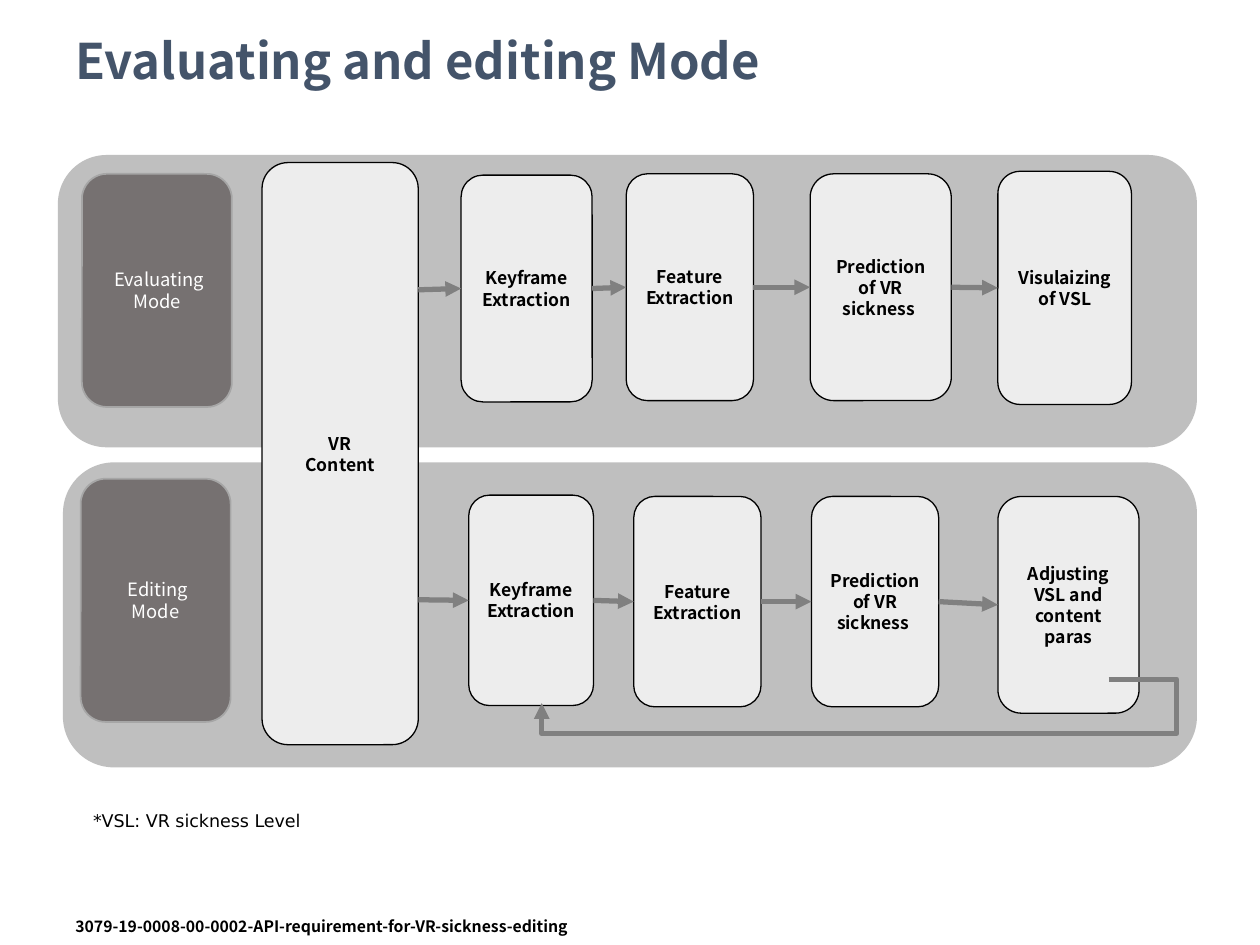
from dataclasses import dataclass

from lxml import etree
from pptx import Presentation
from pptx.dml.color import RGBColor
from pptx.enum.shapes import MSO_CONNECTOR, MSO_SHAPE
from pptx.enum.text import MSO_ANCHOR, PP_ALIGN
from pptx.oxml.ns import qn
from pptx.util import Inches, Pt

ROUNDED = MSO_SHAPE.ROUNDED_RECTANGLE
STRAIGHT = MSO_CONNECTOR.STRAIGHT
ELBOW = MSO_CONNECTOR.ELBOW
MIDDLE = MSO_ANCHOR.MIDDLE
TOP = MSO_ANCHOR.TOP
CENTER = PP_ALIGN.CENTER
LEFT_SIDE, RIGHT_SIDE = 1, 3


@dataclass(frozen=True)
class Theme:
    font: str = "Noto Sans CJK KR"
    note_font: str = "DejaVu Sans"
    title: str = "44546A"
    ink: str = "000000"
    white: str = "FFFFFF"
    band: str = "BFBFBF"
    mode: str = "767171"
    mode_edge: str = "A6A6A6"
    step: str = "EDEDED"
    arrow: str = "808080"
    title_size: float = 28
    mode_size: float = 10.5
    step_size: float = 10
    footer_size: float = 9


THEME = Theme()


def color(value):
    return RGBColor.from_string(value)


def write(shape, lines, size, ink, bold=False, font=THEME.font, align=None):
    frame = shape.text_frame
    frame.text = "\n".join(lines)
    for para in frame.paragraphs:
        para.alignment = align
        para.font.name = font
        para.font.size = Pt(size)
        para.font.bold = bold
        para.font.color.rgb = color(ink)
    return frame


def add_rounded(page, box, fill, edge=None, weight=0.75):
    shape = page.shapes.add_shape(ROUNDED, *map(Inches, box))
    shape.shadow.inherit = False
    shape.fill.solid()
    shape.fill.fore_color.rgb = color(fill)
    if edge:
        shape.line.color.rgb = color(edge)
        shape.line.width = Pt(weight)
    else:
        shape.line.fill.background()
    return shape


def add_step(page, box, lines):
    step = add_rounded(page, box, THEME.step, THEME.ink)
    frame = write(step, lines, THEME.step_size, THEME.ink, bold=True, align=CENTER)
    frame.word_wrap = True
    frame.vertical_anchor = MIDDLE
    return step


def add_mode(page, box, lines):
    mode = add_rounded(page, box, THEME.mode, THEME.mode_edge, 1)
    frame = write(mode, lines, THEME.mode_size, THEME.white, align=CENTER)
    frame.word_wrap = True
    frame.vertical_anchor = MIDDLE


def add_arrow(page, kind, start, end):
    arrow = page.shapes.add_connector(kind, *map(Inches, (*start, *end)))
    arrow.line.color.rgb = color(THEME.arrow)
    arrow.line.width = Pt(3)
    etree.SubElement(arrow.line._get_or_add_ln(), qn("a:tailEnd"), type="triangle")
    etree.SubElement(arrow._element.spPr, qn("a:effectLst"))
    return arrow


def add_flow(page, entry, steps):
    previous = None
    for box, lines in steps:
        step = add_step(page, box, lines)
        left, top, width, height = box
        arrow = add_arrow(page, STRAIGHT, entry, (left, top + height / 2))
        if previous is not None:
            arrow.begin_connect(previous, RIGHT_SIDE)
        arrow.end_connect(step, LEFT_SIDE)
        previous = step
        entry = (left + width, top + height / 2)


def add_feedback(page, start, end, overshoot, drop):
    arrow = add_arrow(page, ELBOW, start, end)
    geometry = arrow._element.spPr.find(qn("a:prstGeom"))
    geometry.set("prst", "bentConnector4")
    guides = geometry.find(qn("a:avLst"))
    if guides is None:
        guides = etree.SubElement(geometry, qn("a:avLst"))
    ratios = (-overshoot / (start[0] - end[0]), drop / (end[1] - start[1]))
    for number, ratio in enumerate(ratios, 1):
        etree.SubElement(guides, qn("a:gd"), name=f"adj{number}", fmla=f"val {round(ratio * 100000)}")


def add_label(page, box, text, size, ink, bold=False, font=THEME.font, wrap=True, anchor=TOP):
    label = page.shapes.add_textbox(*map(Inches, box))
    frame = write(label, [text], size, ink, bold, font)
    frame.word_wrap = wrap
    frame.vertical_anchor = anchor
    return frame


def main():
    deck = Presentation()
    deck.slide_width, deck.slide_height = Inches(10), Inches(7.5)
    page = deck.slides.add_slide(deck.slide_layouts[6])

    title = add_label(page, (0.5, 0.17, 9, 0.67), "Evaluating and editing Mode",
                      THEME.title_size, THEME.title, bold=True, anchor=MIDDLE)
    title.paragraphs[0].line_spacing = 0.9

    add_rounded(page, (0.46, 1.23, 9.04, 2.32), THEME.band)
    add_rounded(page, (0.5, 3.67, 9, 2.42), THEME.band)
    add_mode(page, (0.65, 1.38, 1.19, 1.85), [" Evaluating", "Mode"])
    add_mode(page, (0.64, 3.8, 1.19, 1.93), [" Editing", "Mode"])
    add_step(page, (2.08, 1.29, 1.24, 4.62), ["VR", "Content"])

    keyframe = ["Keyframe Extraction"]
    feature = ["Feature", "Extraction"]
    prediction = ["Prediction of VR sickness "]
    add_flow(page, (3.32, 2.3), [
        ((3.66, 1.39, 1.04, 1.8), keyframe),
        ((4.97, 1.38, 1.01, 1.8), feature),
        ((6.43, 1.38, 1.12, 1.8), prediction),
        ((7.92, 1.36, 1.06, 1.85), ["Visulaizing of VSL"]),
    ])
    add_flow(page, (3.32, 4.76), [
        ((3.72, 3.93, 0.99, 1.67), keyframe),
        ((5.03, 3.94, 1.01, 1.67), feature),
        ((6.44, 3.94, 1.01, 1.67), prediction),
        ((7.92, 3.94, 1.12, 1.72), ["Adjusting", "VSL and", "content paras"]),
    ])
    add_feedback(page, (8.8, 5.39), (4.3, 5.58), overshoot=0.54, drop=0.43)

    add_label(page, (0.64, 6.38, 1.93, 0.27), "*VSL: VR sickness Level",
              THEME.step_size, THEME.ink, font=THEME.note_font, wrap=False)
    add_label(page, (0.5, 7.23, 7.75, 0.27),
              "3079-19-0008-00-0002-API-requirement-for-VR-sickness-editing",
              THEME.footer_size, THEME.ink, bold=True)
    deck.save("out.pptx")


if __name__ == "__main__":
    main()
